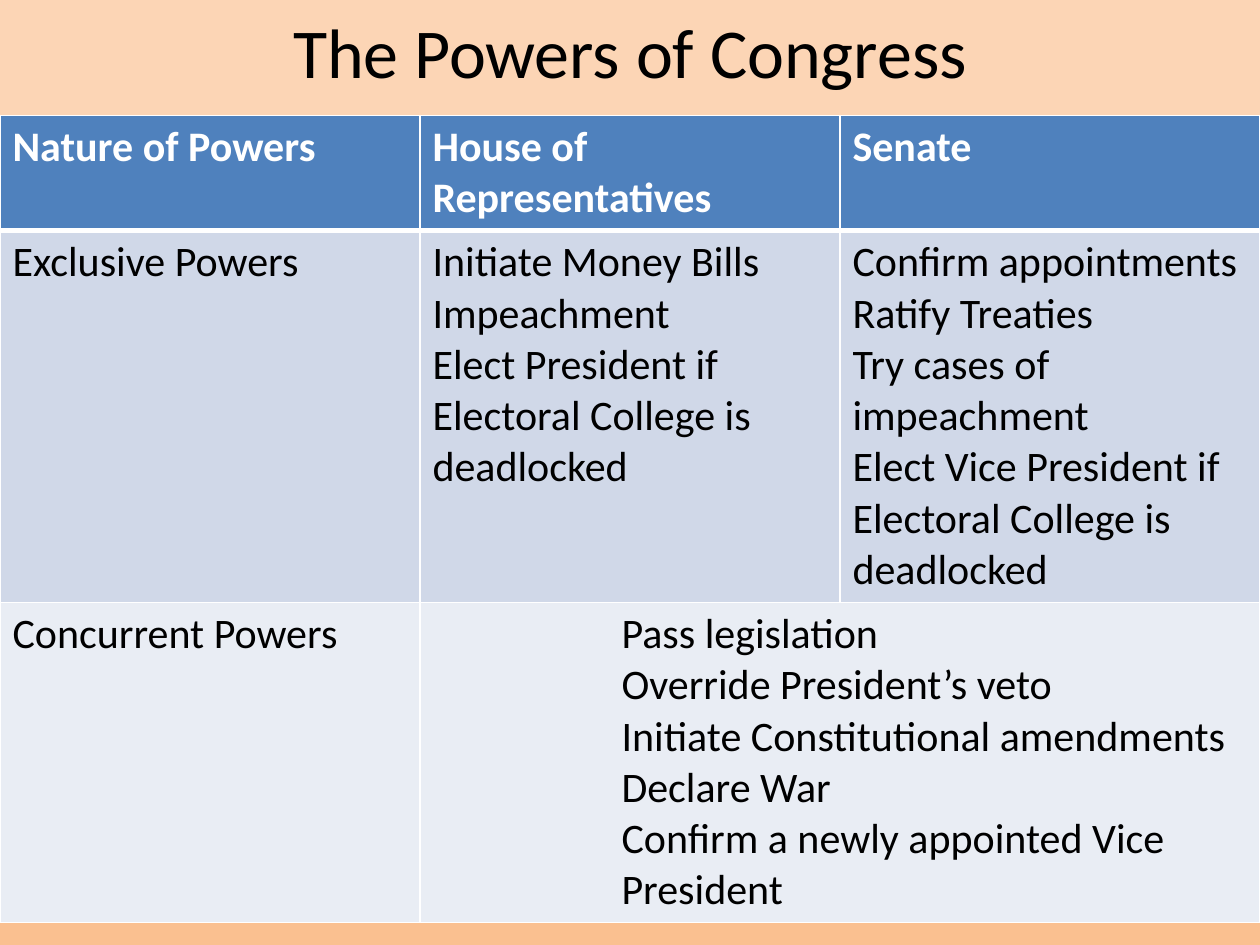
import copy

import pptx
import pptx.dml.color
import pptx.enum.text
import pptx.oxml
import pptx.oxml.ns
import pptx.util

Pt = pptx.util.Pt
RGBColor = pptx.dml.color.RGBColor
qn = pptx.oxml.ns.qn

PEACH = RGBColor(0xFC, 0xD5, 0xB5)
ORANGE = RGBColor(0xFA, 0xC0, 0x90)
HEADER_BLUE = RGBColor(0x4F, 0x81, 0xBD)
BAND_DARK = RGBColor(0xD0, 0xD8, 0xE8)
BAND_LIGHT = RGBColor(0xE9, 0xED, 0xF4)
WHITE = RGBColor(0xFF, 0xFF, 0xFF)
BLACK = RGBColor(0, 0, 0)

FONT = "Calibri"
ROW_HEIGHTS = (65.5, 212.5, 182.5)
ROW_FILLS = (HEADER_BLUE, BAND_DARK, BAND_LIGHT)
POWERS = [
    ["Nature of Powers", "House of Representatives", "Senate"],
    ["Exclusive Powers",
     "Initiate Money Bills\nImpeachment\n"
     "Elect President if Electoral College is deadlocked",
     "Confirm appointments\nRatify Treaties\nTry cases of impeachment\n"
     "Elect Vice President if Electoral College is deadlocked"],
    ["Concurrent Powers",
     "Pass legislation\nOverride President’s veto\n"
     "Initiate Constitutional amendments\nDeclare War\n"
     "Confirm a newly appointed Vice President",
     ""],
]


def set_background(slide):
    """Peach to the middle, then fading to orange at the bottom."""
    fill = slide.background.fill
    fill.gradient()
    fill.gradient_angle = 270
    for stop, color in zip(fill.gradient_stops, (PEACH, ORANGE)):
        stop.color.rgb = color
    first, last = slide.element.findall(".//" + qn("a:gs"))
    first.set("pos", "0")
    last.set("pos", "100000")
    middle = copy.deepcopy(first)
    middle.set("pos", "50000")
    first.addnext(middle)


def format_text(text_frame, size, color, bold=False):
    for paragraph in text_frame.paragraphs:
        for run in paragraph.runs:
            run.font.name = FONT
            run.font.size = Pt(size)
            run.font.bold = bold
            run.font.color.rgb = color


def add_title(slide, text):
    shape = slide.shapes.add_textbox(Pt(144.5), Pt(1.5), Pt(431), Pt(55.5))
    text_frame = shape.text_frame
    text_frame.word_wrap = True
    text_frame.auto_size = pptx.enum.text.MSO_AUTO_SIZE.SHAPE_TO_FIT_TEXT
    text_frame.text = text
    text_frame.paragraphs[0].alignment = pptx.enum.text.PP_ALIGN.CENTER
    format_text(text_frame, 40, BLACK)


def set_borders(cell, top=1, bottom=1):
    properties = cell._tc.get_or_add_tcPr()
    for side, width in (("L", 1), ("R", 1), ("T", top), ("B", bottom)):
        properties.append(pptx.oxml.parse_xml(
            f'<a:ln{side} xmlns:a="http://schemas.openxmlformats.org/drawingml/2006/main"'
            f' w="{Pt(width)}"><a:solidFill><a:srgbClr val="{WHITE}"/></a:solidFill>'
            f'</a:ln{side}>'))


def indent_paragraphs(text_frame, indent):
    for paragraph in text_frame.paragraphs:
        paragraph.level = 3
        properties = paragraph._p.get_or_add_pPr()
        properties.set("marL", str(Pt(indent)))
        properties.set("indent", "0")


def add_powers_table(slide):
    frame = slide.shapes.add_table(
        len(POWERS), len(POWERS[0]), Pt(0), Pt(66), Pt(720), Pt(sum(ROW_HEIGHTS)))
    table = frame.table
    for column in table.columns:
        column.width = Pt(240)
    for row, height in zip(table.rows, ROW_HEIGHTS):
        row.height = Pt(height)

    for row_index, texts in enumerate(POWERS):
        header = row_index == 0
        for column_index, text in enumerate(texts):
            cell = table.cell(row_index, column_index)
            set_borders(cell, top=3 if row_index == 1 else 1,
                        bottom=3 if header else 1)
            cell.fill.solid()
            cell.fill.fore_color.rgb = ROW_FILLS[row_index]
            cell.text_frame.text = text
            format_text(cell.text_frame, 24, WHITE if header else BLACK, header)

    # Concurrent powers belong to both chambers
    shared = table.cell(2, 1)
    shared.merge(table.cell(2, 2))
    indent_paragraphs(shared.text_frame, 108)


def main():
    presentation = pptx.Presentation()
    presentation.slide_width = Pt(720)
    presentation.slide_height = Pt(540)
    slide = presentation.slides.add_slide(presentation.slide_layouts[6])
    set_background(slide)
    add_powers_table(slide)
    add_title(slide, "The Powers of Congress")
    presentation.save("out.pptx")


if __name__ == "__main__":
    main()
